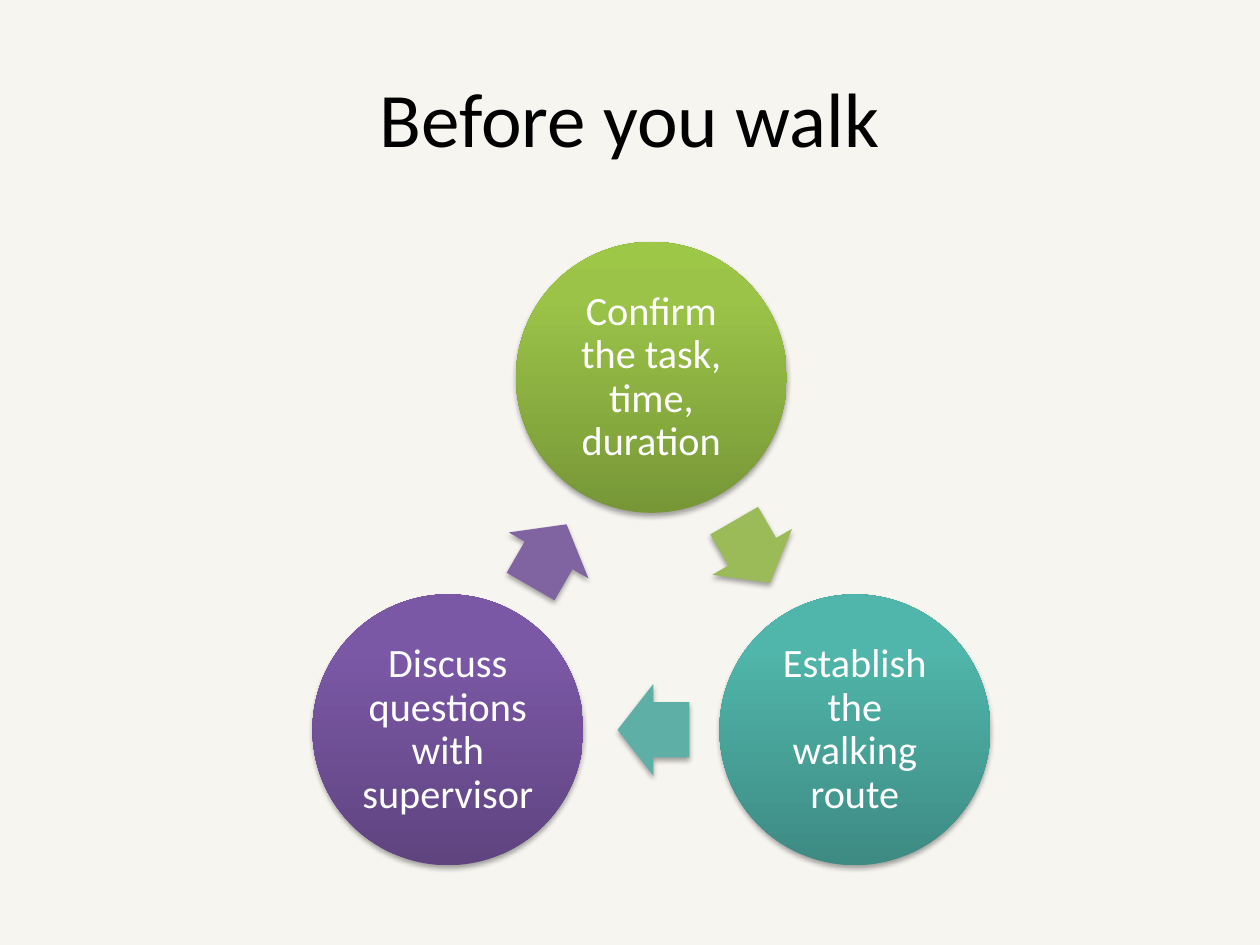
import math

import lxml.etree
import pptx
import pptx.dml.color
import pptx.enum.shapes
import pptx.enum.text
import pptx.oxml
import pptx.oxml.ns
import pptx.util

Inches = pptx.util.Inches
Pt = pptx.util.Pt
RGB = pptx.dml.color.RGBColor
KINDS = pptx.enum.shapes.MSO_SHAPE
MIDDLE = pptx.enum.text.MSO_ANCHOR.MIDDLE
CENTER = pptx.enum.text.PP_ALIGN.CENTER

PAPER = RGB(0xF6, 0xF5, 0xF0)
BLACK = RGB(0x00, 0x00, 0x00)
WHITE = RGB(0xFF, 0xFF, 0xFF)
GREEN = RGB(0x9B, 0xBB, 0x59)
TEAL = RGB(0x5E, 0xAF, 0xA6)
PURPLE = RGB(0x80, 0x64, 0xA2)
GREENS = [RGB(0x77, 0x97, 0x37), RGB(0x9B, 0xC3, 0x48), RGB(0x9D, 0xC7, 0x46)]
TEALS = [RGB(0x3D, 0x8B, 0x83), RGB(0x50, 0xB5, 0xAA), RGB(0x4E, 0xB8, 0xAC)]
PURPLES = [RGB(0x5F, 0x44, 0x80), RGB(0x7B, 0x58, 0xA6), RGB(0x7C, 0x57, 0xA8)]

STEPS = [
    ("Confirm the task, time, duration", GREENS, GREEN),
    ("Establish the walking route", TEALS, TEAL),
    ("Discuss questions with supervisor", PURPLES, PURPLE),
]
TITLE = {"name": "Calibri", "size": Pt(44)}
LABEL = {"name": "Calibri", "size": Pt(23)}
INSETS = ("margin_left", "margin_top", "margin_right", "margin_bottom")


def write(shape, text, form, color, inset, space):
    """Fill a shape with one centred, wrapped paragraph."""
    frame = shape.text_frame
    frame.word_wrap = True
    frame.vertical_anchor = MIDDLE
    for side in INSETS:
        setattr(frame, side, inset)
    para = frame.paragraphs[0]
    para.alignment = CENTER
    para.line_spacing = space
    run = para.add_run()
    run.text = text
    for key, value in form.items():
        setattr(run.font, key, value)
    run.font.color.rgb = color


def shade(shape):
    """Give a shape a soft shadow straight below it."""
    shape.shadow.inherit = False
    tag = pptx.oxml.ns.qn
    effects = shape.element.spPr.find(tag("a:effectLst"))
    outer = lxml.etree.SubElement(
        effects, tag("a:outerShdw"), blurRad=str(Pt(3.1)),
        dist=str(Pt(1.8)), dir="5400000", rotWithShape="0")
    color = lxml.etree.SubElement(outer, tag("a:srgbClr"), val="000000")
    lxml.etree.SubElement(color, tag("a:alpha"), val="35000")


def blend(shape, colors):
    """Fill a shape with three colours running from bottom to top."""
    stops = "".join(
        f'<a:gs pos="{spot * 1000}"><a:srgbClr val="{color}"/></a:gs>'
        for spot, color in zip((0, 80, 100), colors))
    fill = pptx.oxml.parse_xml(
        f'<a:gradFill {pptx.oxml.ns.nsdecls("a")} rotWithShape="1">'
        f'<a:gsLst>{stops}</a:gsLst>'
        '<a:lin ang="16200000" scaled="0"/></a:gradFill>')
    outline = shape.element.spPr.find(pptx.oxml.ns.qn("a:prstGeom"))
    outline.addnext(fill)


def place(slide, kind, x, y, width, height):
    """Add a shadowed shape without outline, centred on a point."""
    shape = slide.shapes.add_shape(
        kind, int(x - width / 2), int(y - height / 2), width, height)
    shape.line.fill.background()
    shade(shape)
    return shape


def draw_title(slide, left, top, width, height):
    """Place the slide title in its box."""
    box = slide.shapes.add_textbox(left, top, width, height)
    write(box, "Before you walk", TITLE, BLACK, Inches(0.1), 1.0)


def draw_cycle(slide, left, top, width):
    """Place the ring of steps and the arrows between them."""
    size = Inches(2.15)
    radius = (width - size) / math.sqrt(3)
    mid = left + width / 2
    level = top + size / 2 + radius
    turns = [math.radians(120 * i - 90) for i in range(len(STEPS))]
    spots = [(mid + radius * math.cos(t), level + radius * math.sin(t))
             for t in turns]
    for i, (text, colors, color) in enumerate(STEPS):
        x, y = spots[i]
        disc = place(slide, KINDS.OVAL, x, y, size, size)
        blend(disc, colors)
        write(disc, text, LABEL, WHITE, Inches(0.03), 0.9)

        far, low = spots[(i + 1) % len(spots)]
        arrow = place(slide, KINDS.RIGHT_ARROW, x + 0.495 * (far - x),
                      y + 0.495 * (low - y), Inches(0.57), Inches(0.73))
        arrow.adjustments[0] = 0.6
        arrow.adjustments[1] = 0.5
        arrow.rotation = 60 + 120 * i
        arrow.fill.solid()
        arrow.fill.fore_color.rgb = color


def main():
    """Build and save the slide."""
    deck = pptx.Presentation()
    deck.slide_width = Inches(10)
    deck.slide_height = Inches(7.5)
    slide = deck.slides.add_slide(deck.slide_layouts[6])
    slide.background.fill.solid()
    slide.background.fill.fore_color.rgb = PAPER
    draw_title(slide, Inches(0.5), Inches(0.3), Inches(9), Inches(1.25))
    draw_cycle(slide, Inches(2.48), Inches(1.92), Inches(5.38))
    deck.save("out.pptx")


if __name__ == "__main__":
    main()
